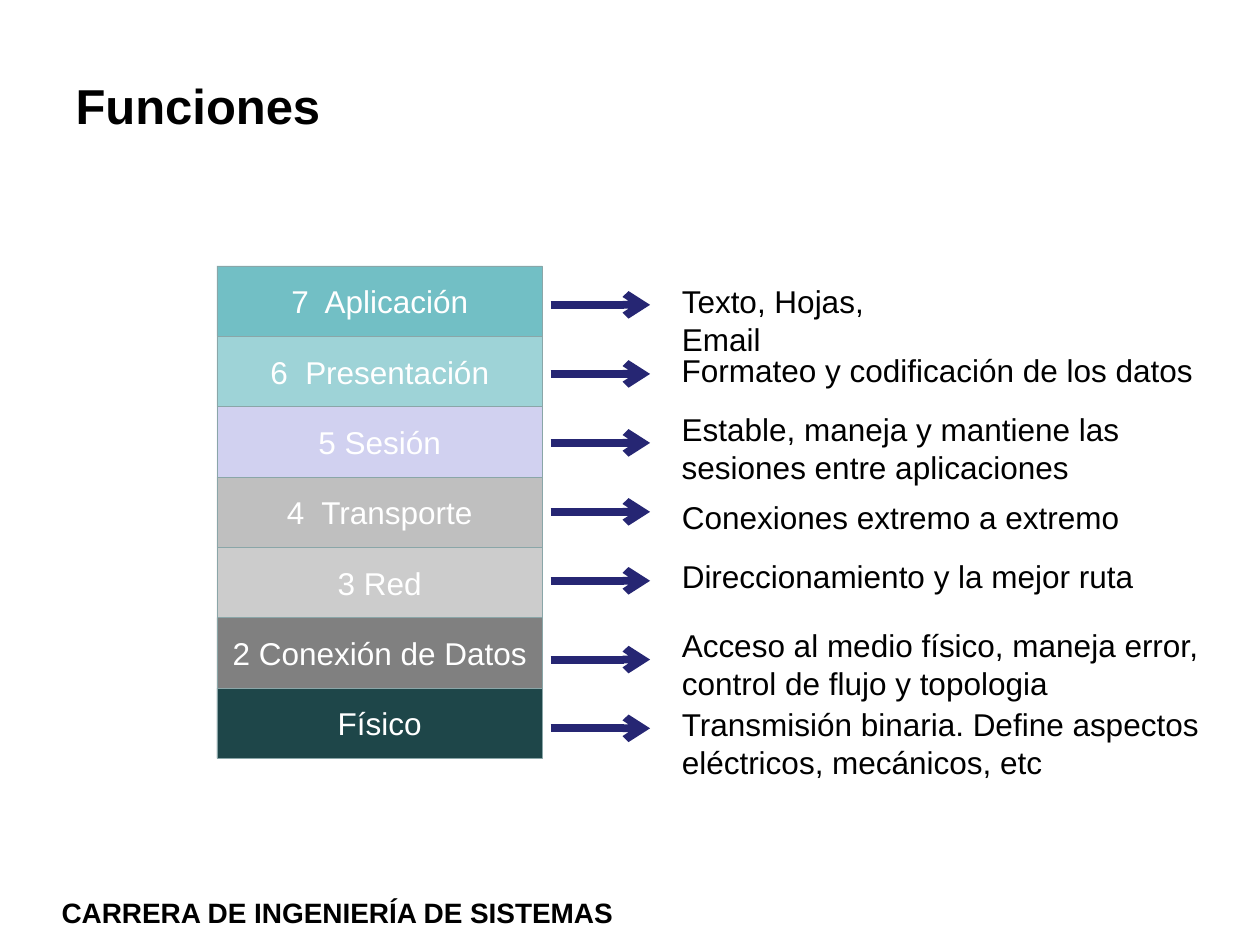
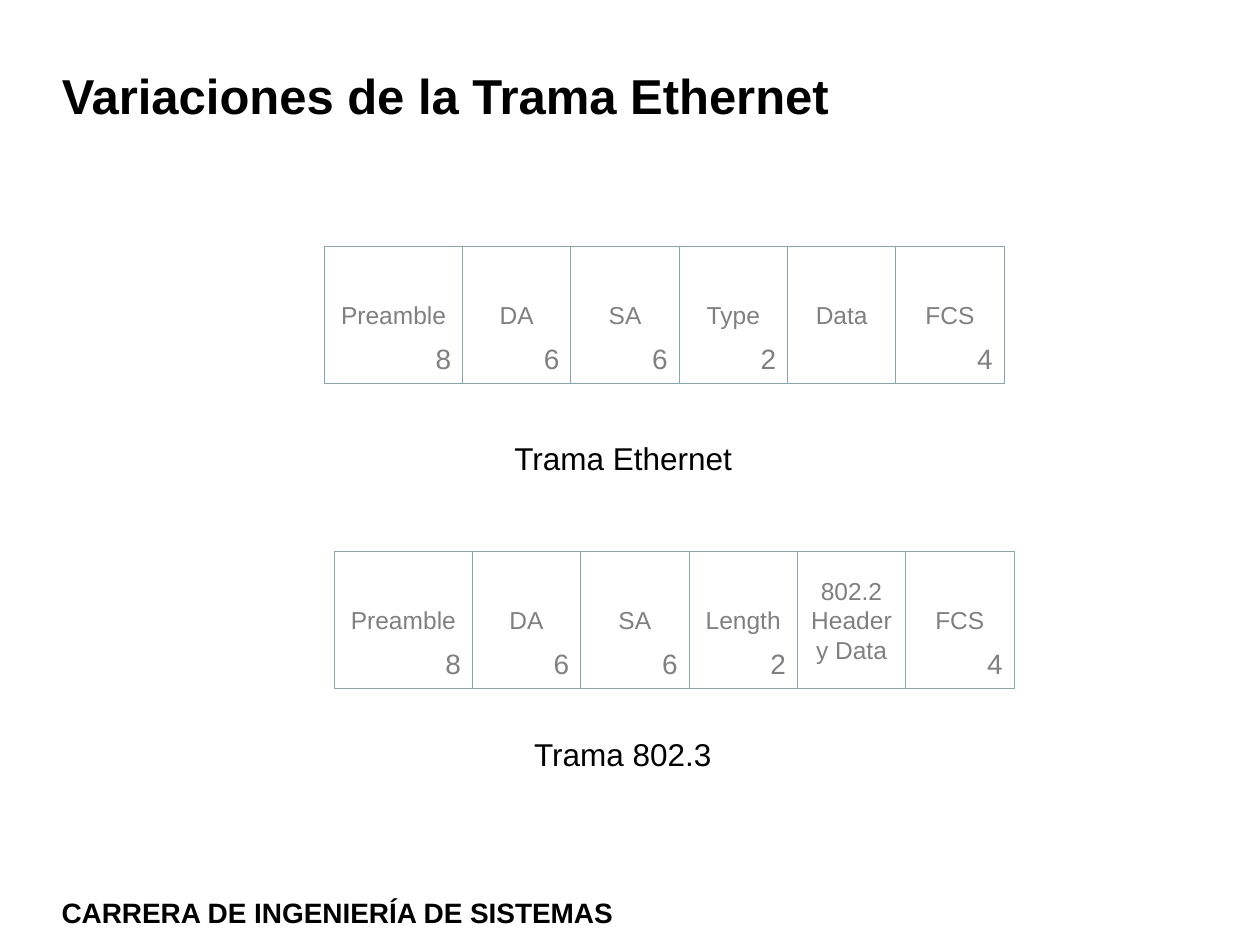
from dataclasses import dataclass

from lxml import etree
from pptx import Presentation
from pptx.dml.color import RGBColor
from pptx.enum import shapes, text
from pptx.oxml import ns
from pptx.presentation import Presentation as Deck
from pptx.slide import Slide
from pptx.text.text import TextFrame
from pptx.util import Pt

FONT = "Arial"
BLACK = RGBColor(0x00, 0x00, 0x00)
WHITE = RGBColor(0xFF, 0xFF, 0xFF)
GREY = RGBColor(0x80, 0x80, 0x80)
BORDER = RGBColor(0x8A, 0xA6, 0xA8)
NAVY = RGBColor(0x26, 0x26, 0x73)
TEAL = RGBColor(0x72, 0xBF, 0xC5)
LIGHT_TEAL = RGBColor(0x9E, 0xD3, 0xD7)
LAVENDER = RGBColor(0xD1, 0xD1, 0xF0)
SILVER = RGBColor(0xBF, 0xBF, 0xBF)
PALE_GREY = RGBColor(0xCC, 0xCC, 0xCC)
DARK_TEAL = RGBColor(0x1E, 0x46, 0x49)

FOOTER = "CARRERA DE INGENIERÍA DE SISTEMAS"
TITLE_ONLY = 5


@dataclass(frozen=True)
class Box:
    """A rectangle in points."""
    left: float
    top: float
    width: float
    height: float


@dataclass(frozen=True)
class Layer:
    """A level of the stack with its arrow height and explanation."""
    label: str
    fill: RGBColor
    arrow_y: float
    note: str
    note_top: float
    note_width: float
    note_lines: int = 1


@dataclass(frozen=True)
class Field:
    label: str
    octets: str = ""


@dataclass(frozen=True)
class Frame:
    left: float
    top: float
    fields: list[Field]
    caption: str
    caption_left: float
    caption_top: float


STACK = Box(124, 152, 186, 40.2)
ARROW_START, ARROW_END = 314.6, 371.5
NOTE_LEFT = 382.5
NOTE_HEIGHTS = {1: 28.8, 2: 51}
LAYERS = [
    Layer("7  Aplicación", TEAL, 174.2, "Texto, Hojas, Email", 157.5, 168),
    Layer("6  Presentación", LIGHT_TEAL, 213.7,
          "Formateo y codificación de los datos", 196.9, 310),
    Layer("5 Sesión", LAVENDER, 253.1,
          "Estable, maneja y mantiene las sesiones entre aplicaciones",
          230.6, 337.5, 2),
    Layer("4  Transporte", SILVER, 292.5, "Conexiones extremo a extremo", 281.2, 267),
    Layer("3 Red", PALE_GREY, 331.9, "Direccionamiento y la mejor ruta", 315, 275),
    Layer("2 Conexión de Datos", GREY, 376.9,
          "Acceso al medio físico, maneja error, control de flujo y topologia",
          354.4, 315, 2),
    Layer("Físico", DARK_TEAL, 416.2,
          "Transmisión binaria. Define aspectos eléctricos, mecánicos, etc",
          399.4, 315, 2),
]

PREAMBLE_WIDTH, FIELD_WIDTH, FIELD_HEIGHT = 78.75, 61.9, 78.5
OCTETS_WIDTH, OCTETS_DROP = 22.5, 50.8
ADDRESSING = [Field("Preamble", "8"), Field("DA", "6"), Field("SA", "6")]
CHECKSUM = Field("FCS", "4")
FRAMES = [
    Frame(185.6, 140.6, [*ADDRESSING, Field("Type", "2"), Field("Data"), CHECKSUM],
          "Trama Ethernet", 286.9, 247.5),
    Frame(191.2, 315,
          [*ADDRESSING, Field("Length", "2"), Field("802.2 Header y Data"), CHECKSUM],
          "Trama 802.3", 298.1, 416.2),
]


def write(frame: TextFrame, words: str, size: float, color: RGBColor,
          bold: bool = False, align: text.PP_ALIGN = text.PP_ALIGN.LEFT) -> None:
    frame.text = words
    frame.word_wrap = True
    line = frame.paragraphs[0]
    line.alignment = align
    font = line.runs[0].font
    font.name, font.size, font.bold = FONT, Pt(size), bold
    font.color.rgb = color


def add_label(slide: Slide, box: Box, words: str, size: float,
              color: RGBColor = BLACK, bold: bool = False) -> None:
    label = slide.shapes.add_textbox(
        Pt(box.left), Pt(box.top), Pt(box.width), Pt(box.height))
    write(label.text_frame, words, size, color, bold)
    label.text_frame.auto_size = text.MSO_AUTO_SIZE.SHAPE_TO_FIT_TEXT


def add_cell(slide: Slide, box: Box, words: str, size: float, color: RGBColor,
             fill: RGBColor, border: float) -> None:
    """Draw a bordered rectangle with centred text."""
    cell = slide.shapes.add_shape(
        shapes.MSO_SHAPE.RECTANGLE,
        Pt(box.left), Pt(box.top), Pt(box.width), Pt(box.height))
    cell.shadow.inherit = False
    cell.fill.solid()
    cell.fill.fore_color.rgb = fill
    cell.line.color.rgb = BORDER
    cell.line.width = Pt(border)
    write(cell.text_frame, words, size, color, align=text.PP_ALIGN.CENTER)
    cell.text_frame.vertical_anchor = text.MSO_ANCHOR.MIDDLE


def add_arrow(slide: Slide, y: float) -> None:
    arrow = slide.shapes.add_connector(
        shapes.MSO_CONNECTOR.STRAIGHT, Pt(ARROW_START), Pt(y), Pt(ARROW_END), Pt(y))
    arrow.line.color.rgb = NAVY
    arrow.line.width = Pt(4.5)
    etree.SubElement(arrow.line._get_or_add_ln(), ns.qn("a:tailEnd"), type="arrow")
    etree.SubElement(arrow._element.spPr, ns.qn("a:effectLst"))


def add_titled_slide(deck: Deck, heading: str, box: Box) -> Slide:
    """Add a slide with its title and the shared footer."""
    slide = deck.slides.add_slide(deck.slide_layouts[TITLE_ONLY])
    title = slide.shapes.title
    title.left, title.top = Pt(box.left), Pt(box.top)
    title.width, title.height = Pt(box.width), Pt(box.height)
    write(title.text_frame, heading, 28, BLACK, bold=True)
    title.text_frame.vertical_anchor = text.MSO_ANCHOR.TOP
    title.text_frame.auto_size = text.MSO_AUTO_SIZE.NONE
    add_label(slide, Box(28.1, 508.1, 366, 26.6), FOOTER, 16, bold=True)
    return slide


def add_layer(slide: Slide, index: int, layer: Layer) -> None:
    level = Box(STACK.left, STACK.top + index * STACK.height, STACK.width, STACK.height)
    add_cell(slide, level, layer.label, 18, WHITE, layer.fill, 0.25)
    add_arrow(slide, layer.arrow_y)
    note = Box(NOTE_LEFT, layer.note_top, layer.note_width,
               NOTE_HEIGHTS[layer.note_lines])
    add_label(slide, note, layer.note, 18)


def add_frame(slide: Slide, frame: Frame) -> None:
    left = frame.left
    for index, field in enumerate(frame.fields):
        width = FIELD_WIDTH if index else PREAMBLE_WIDTH
        add_cell(slide, Box(left, frame.top, width, FIELD_HEIGHT),
                 field.label, 14, GREY, WHITE, 0.5)
        left += width
        if field.octets:
            corner = Box(left - OCTETS_WIDTH, frame.top + OCTETS_DROP, OCTETS_WIDTH, 26.6)
            add_label(slide, corner, field.octets, 16, GREY)
    add_label(slide, Box(frame.caption_left, frame.caption_top, 140.6, 28.8),
              frame.caption, 18)


def main() -> None:
    deck = Presentation()
    deck.slide_width, deck.slide_height = Pt(720), Pt(540)

    functions = add_titled_slide(deck, "Funciones", Box(36, 39.4, 442, 50.6))
    for index, layer in enumerate(LAYERS):
        add_layer(functions, index, layer)

    variations = add_titled_slide(
        deck, "Variaciones de la Trama Ethernet", Box(28.1, 33.8, 500.6, 41))
    for frame in FRAMES:
        add_frame(variations, frame)

    deck.save("out.pptx")


if __name__ == "__main__":
    main()
